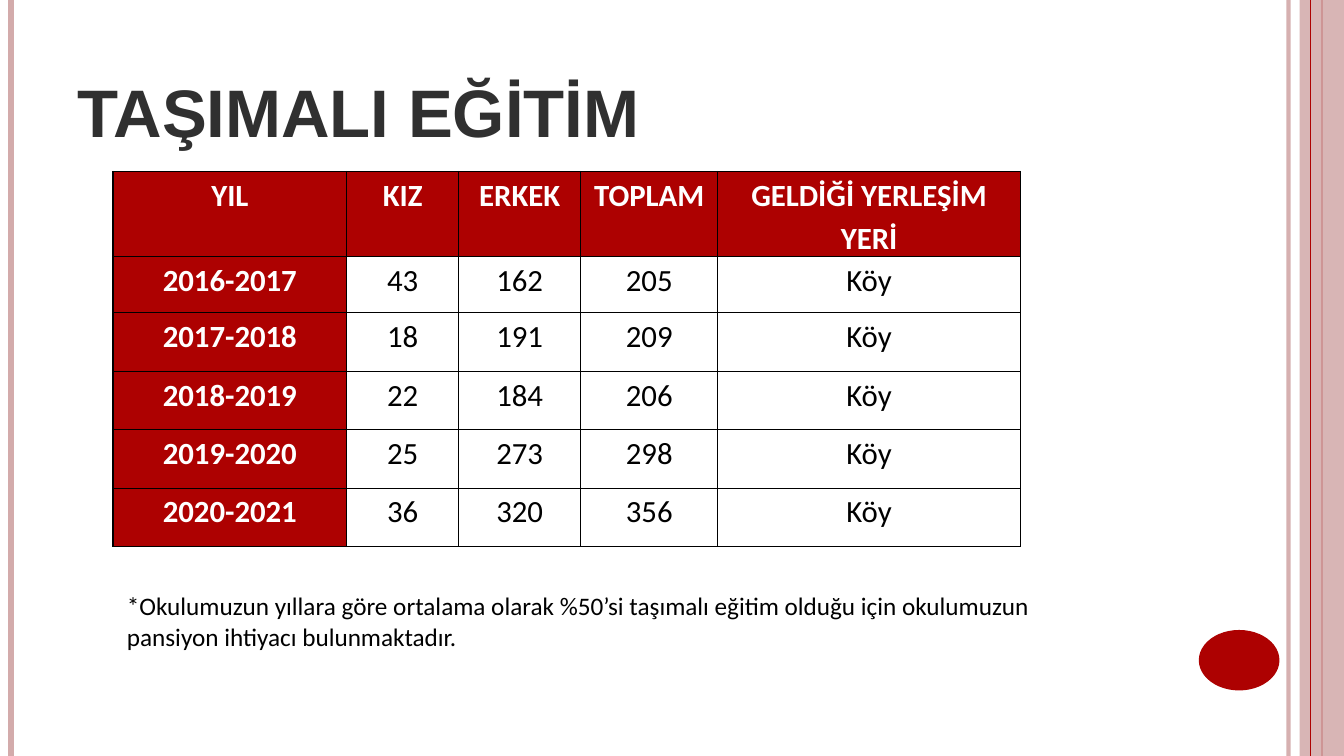
from dataclasses import dataclass

from pptx import Presentation
from pptx.dml.color import RGBColor
from pptx.enum import shapes, text
from pptx.oxml import ns, xmlchemy
from pptx.util import Inches, Pt

RED = RGBColor(0xAD, 0x01, 0x01)
PINK = RGBColor(0xD3, 0xAB, 0xAB)
CHARCOAL = RGBColor(0x30, 0x30, 0x30)
BLACK = RGBColor(0, 0, 0)
WHITE = RGBColor(0xFF, 0xFF, 0xFF)

SLIDE_WIDTH, SLIDE_HEIGHT = 13.33, 7.5


@dataclass(frozen=True)
class Stripe:
    """A vertical line over the full height of the slide."""
    x: float
    color: RGBColor
    points: float
    opacity: int = 100


@dataclass(frozen=True)
class Panel:
    kind: shapes.MSO_SHAPE
    left: float
    top: float
    width: float
    height: float
    color: RGBColor
    opacity: int = 100


@dataclass(frozen=True)
class TextBlock:
    words: str
    left: float
    top: float
    width: float
    height: float
    font: str
    points: int
    color: RGBColor
    bold: bool = False
    anchor: text.MSO_ANCHOR = text.MSO_ANCHOR.TOP


@dataclass(frozen=True)
class SchoolYear:
    name: str
    girls: int
    boys: int
    origin: str = "Köy"

    def cells(self) -> list[str]:
        total = self.girls + self.boys
        return [self.name, str(self.girls), str(self.boys), str(total), self.origin]


BACK_STRIPES = [
    Stripe(12.78, PINK, 3, 93),
    Stripe(0.11, PINK, 4.5),
    Stripe(13.11, RED, 1.5),
]
SIDE_BAND = Panel(shapes.MSO_SHAPE.RECTANGLE, 12.89, 0, 0.44, SLIDE_HEIGHT, PINK, 87)
FRONT_STRIPE = Stripe(13, RED, 0.75)
PAGE_OVAL = Panel(shapes.MSO_SHAPE.OVAL, 11.89, 6.25, 0.8, 0.6, RED)

TITLE = TextBlock("TAŞIMALI EĞİTİM", 0.67, 0.3, 10.89, 1.25, "Arial", 48, CHARCOAL,
                  bold=True, anchor=text.MSO_ANCHOR.BOTTOM)
FOOTNOTE = TextBlock(
    "*Okulumuzun yıllara göre ortalama olarak %50’si taşımalı eğitim olduğu için "
    "okulumuzun pansiyon ihtiyacı bulunmaktadır.",
    1.16, 5.81, 9.52, 0.71, "Calibri", 18, BLACK)

HEADINGS = ["YIL", "KIZ", "ERKEK", "TOPLAM", "GELDİĞİ YERLEŞİM YERİ"]
SCHOOL_YEARS = [
    SchoolYear("2016-2017", 43, 162),
    SchoolYear("2017-2018", 18, 191),
    SchoolYear("2018-2019", 22, 184),
    SchoolYear("2019-2020", 25, 273),
    SchoolYear("2020-2021", 36, 320),
]
TABLE_LEFT, TABLE_TOP = 1.12, 1.7
COLUMN_WIDTHS = [2.32, 1.11, 1.21, 1.36, 3]
ROW_HEIGHTS = [0.84, 0.56] + [0.58] * 4


def set_opacity(shape, percent: int) -> None:
    if percent < 100:
        for color in shape._element.spPr.iter(ns.qn("a:srgbClr")):
            alpha = xmlchemy.OxmlElement("a:alpha")
            alpha.set("val", str(percent * 1000))
            color.append(alpha)


def add_stripe(slide, stripe: Stripe) -> None:
    line = slide.shapes.add_connector(
        shapes.MSO_CONNECTOR.STRAIGHT,
        Inches(stripe.x), 0, Inches(stripe.x), Inches(SLIDE_HEIGHT))
    line.line.color.rgb = stripe.color
    line.line.width = Pt(stripe.points)
    set_opacity(line, stripe.opacity)
    line._element.spPr.append(xmlchemy.OxmlElement("a:effectLst"))


def add_panel(slide, panel: Panel) -> None:
    shape = slide.shapes.add_shape(
        panel.kind, Inches(panel.left), Inches(panel.top),
        Inches(panel.width), Inches(panel.height))
    shape.shadow.inherit = False
    shape.fill.solid()
    shape.fill.fore_color.rgb = panel.color
    shape.line.fill.background()
    set_opacity(shape, panel.opacity)


def add_run(paragraph, words: str, font: str, points: int, color: RGBColor,
            bold: bool) -> None:
    run = paragraph.add_run()
    run.text = words
    run.font.name = font
    run.font.size = Pt(points)
    run.font.color.rgb = color
    run.font.bold = bold


def add_text(slide, block: TextBlock) -> None:
    box = slide.shapes.add_textbox(
        Inches(block.left), Inches(block.top), Inches(block.width), Inches(block.height))
    frame = box.text_frame
    frame.word_wrap = True
    frame.vertical_anchor = block.anchor
    add_run(frame.paragraphs[0], block.words, block.font, block.points,
            block.color, block.bold)


def add_borders(cell) -> None:
    """Give the cell a thin black line on all four sides."""
    properties = cell._tc.get_or_add_tcPr()
    for position, side in enumerate(("a:lnL", "a:lnR", "a:lnT", "a:lnB")):
        line = xmlchemy.OxmlElement(side)
        line.set("w", str(Pt(1)))
        fill = xmlchemy.OxmlElement("a:solidFill")
        color = xmlchemy.OxmlElement("a:srgbClr")
        color.set("val", str(BLACK))
        fill.append(color)
        line.append(fill)
        properties.insert(position, line)


def fill_cell(cell, words: str, is_heading: bool) -> None:
    cell.margin_left = cell.margin_right = Inches(0.07)
    cell.margin_top = cell.margin_bottom = 0
    if is_heading:
        cell.fill.solid()
        cell.fill.fore_color.rgb = RED
    else:
        cell.fill.background()
    add_borders(cell)
    paragraph = cell.text_frame.paragraphs[0]
    paragraph.alignment = text.PP_ALIGN.CENTER
    paragraph.line_spacing = 1.15
    paragraph.space_after = Pt(10)
    add_run(paragraph, words, "Calibri", 22, WHITE if is_heading else BLACK, is_heading)


def add_student_table(slide) -> None:
    rows = [HEADINGS] + [year.cells() for year in SCHOOL_YEARS]
    table = slide.shapes.add_table(
        len(rows), len(HEADINGS), Inches(TABLE_LEFT), Inches(TABLE_TOP),
        Inches(sum(COLUMN_WIDTHS)), Inches(sum(ROW_HEIGHTS))).table
    table.first_row = table.horz_banding = False
    for column, width in zip(table.columns, COLUMN_WIDTHS):
        column.width = Inches(width)
    for row, height in zip(table.rows, ROW_HEIGHTS):
        row.height = Inches(height)
    for r, row_words in enumerate(rows):
        for c, words in enumerate(row_words):
            fill_cell(table.cell(r, c), words, is_heading=r == 0 or c == 0)


def main() -> None:
    presentation = Presentation()
    presentation.slide_width = Inches(SLIDE_WIDTH)
    presentation.slide_height = Inches(SLIDE_HEIGHT)
    slide = presentation.slides.add_slide(presentation.slide_layouts[6])
    for stripe in BACK_STRIPES:
        add_stripe(slide, stripe)
    add_panel(slide, SIDE_BAND)
    add_stripe(slide, FRONT_STRIPE)
    add_panel(slide, PAGE_OVAL)
    add_text(slide, TITLE)
    add_student_table(slide)
    add_text(slide, FOOTNOTE)
    presentation.save("out.pptx")


if __name__ == "__main__":
    main()
